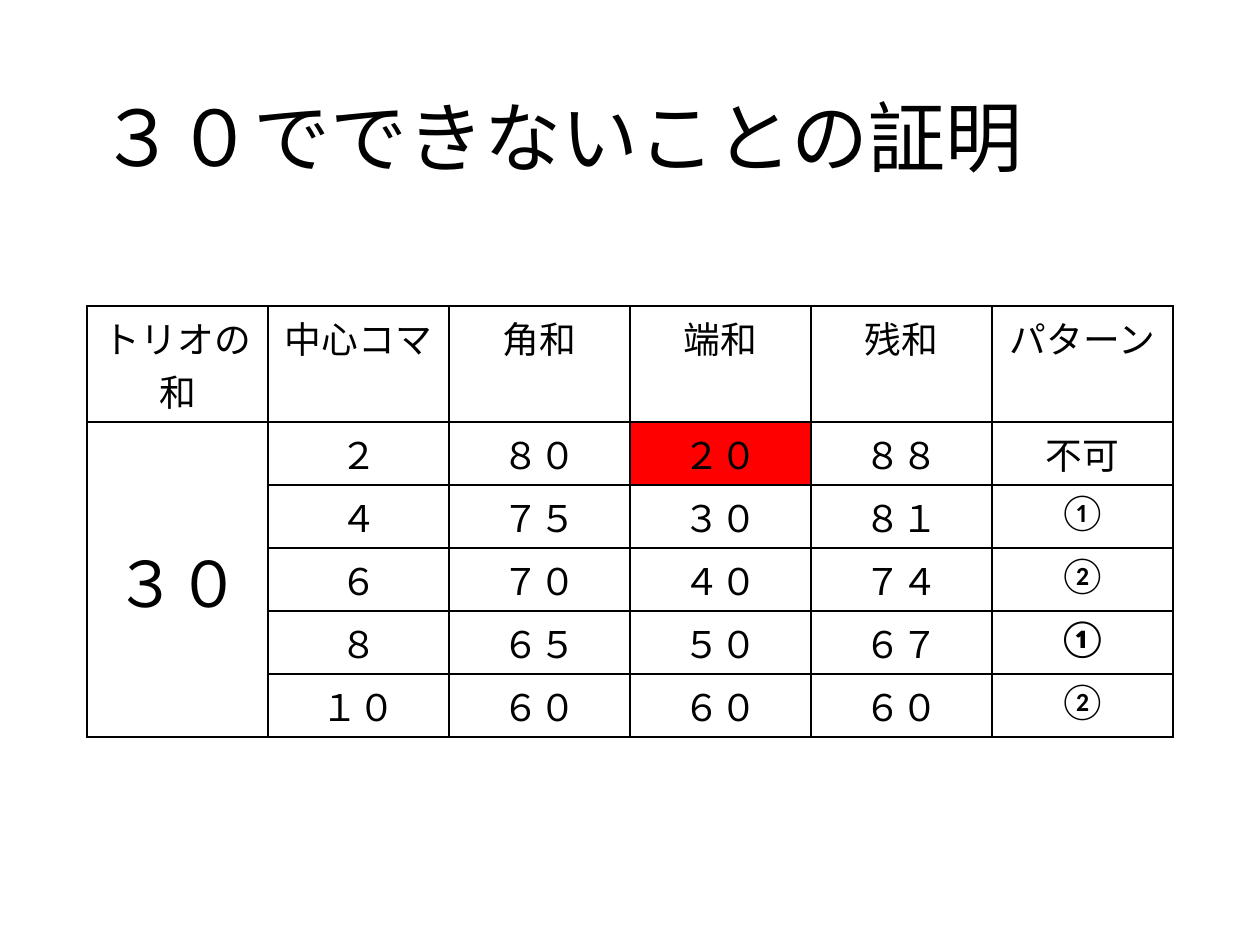
from lxml import etree
from pptx import Presentation
from pptx.dml.color import RGBColor
from pptx.enum.text import MSO_ANCHOR, PP_ALIGN
from pptx.oxml.ns import qn
from pptx.util import Inches, Pt

BLACK = RGBColor(0, 0, 0)
RED = RGBColor(255, 0, 0)
CENTER = PP_ALIGN.CENTER
LEFT = PP_ALIGN.LEFT
MIDDLE = MSO_ANCHOR.MIDDLE
TOP = MSO_ANCHOR.TOP

TITLE = "３０でできないことの証明"
ROWS = [
    ["トリオの和", "中心コマ", "角和", "端和", "残和", "パターン"],
    ["３０", "２", "８０", "２０", "８８", "不可"],
    ["", "４", "７５", "３０", "８１", "①"],
    ["", "６", "７０", "４０", "７４", "②"],
    ["", "８", "６５", "５０", "６７", "①"],
    ["", "１０", "６０", "６０", "６０", "②"],
]


class SlideBuilder:
    """Hold the slide and its style, and add styled elements to it."""

    font_name = "Calibri"
    color = BLACK
    body_size = 21
    border_width = Pt(1)
    header_height = Inches(0.92)
    row_height = Inches(0.5)

    def __init__(self, slide):
        self.slide = slide

    def format_text(self, text_frame, size, alignment=LEFT, bold=False):
        for paragraph in text_frame.paragraphs:
            paragraph.alignment = alignment
            for run in paragraph.runs:
                run.font.name = self.font_name
                run.font.size = Pt(size)
                run.font.bold = bold
                run.font.color.rgb = self.color

    def add_title(self, text, left, top, width, height):
        shape = self.slide.shapes.add_textbox(left, top, width, height)
        text_frame = shape.text_frame
        text_frame.word_wrap = True
        text_frame.vertical_anchor = MIDDLE
        text_frame.text = text
        text_frame.paragraphs[0].line_spacing = 0.9
        self.format_text(text_frame, 44)

    def add_borders(self, cell):
        properties = cell._tc.get_or_add_tcPr()
        for side in ("a:lnL", "a:lnR", "a:lnT", "a:lnB"):
            line = etree.SubElement(properties, qn(side), w=str(self.border_width))
            fill = etree.SubElement(line, qn("a:solidFill"))
            etree.SubElement(fill, qn("a:srgbClr"), val=str(self.color))

    def format_cell(self, cell, text, size, anchor, bold, fill_color):
        cell.margin_left = cell.margin_right = Inches(0.07)
        cell.margin_top = cell.margin_bottom = Inches(0.04)
        cell.vertical_anchor = anchor
        cell.text_frame.text = text
        self.format_text(cell.text_frame, size, CENTER, bold)
        self.add_borders(cell)
        if fill_color is None:
            cell.fill.background()
        else:
            cell.fill.solid()
            cell.fill.fore_color.rgb = fill_color

    def add_table(self, rows, left, top, width, total, bold, fills):
        height = self.header_height + self.row_height * (len(rows) - 1)
        shape = self.slide.shapes.add_table(
            len(rows), len(rows[0]), left, top, width, height
        )
        table = shape.table
        table.first_row = False
        table.horz_banding = False
        for row, values in enumerate(rows):
            table.rows[row].height = self.row_height if row else self.header_height
            for column, value in enumerate(values):
                position = (row, column)
                is_total = position == total
                self.format_cell(
                    table.cell(row, column),
                    value,
                    36 if is_total else self.body_size,
                    MIDDLE if is_total else TOP,
                    position in bold,
                    fills.get(position),
                )
        table.cell(*total).merge(table.cell(len(rows) - 1, total[1]))


def main():
    presentation = Presentation()
    presentation.slide_width = Inches(10)
    presentation.slide_height = Inches(7.5)
    slide = presentation.slides.add_slide(presentation.slide_layouts[6])
    builder = SlideBuilder(slide)
    left, width = Inches(0.69), Inches(8.62)
    builder.add_title(TITLE, left, Inches(0.4), width, Inches(1.45))
    builder.add_table(
        ROWS, left, Inches(2.43), width,
        total=(1, 0), bold={(4, 5)}, fills={(1, 3): RED},
    )
    presentation.save("out.pptx")


if __name__ == "__main__":
    main()
